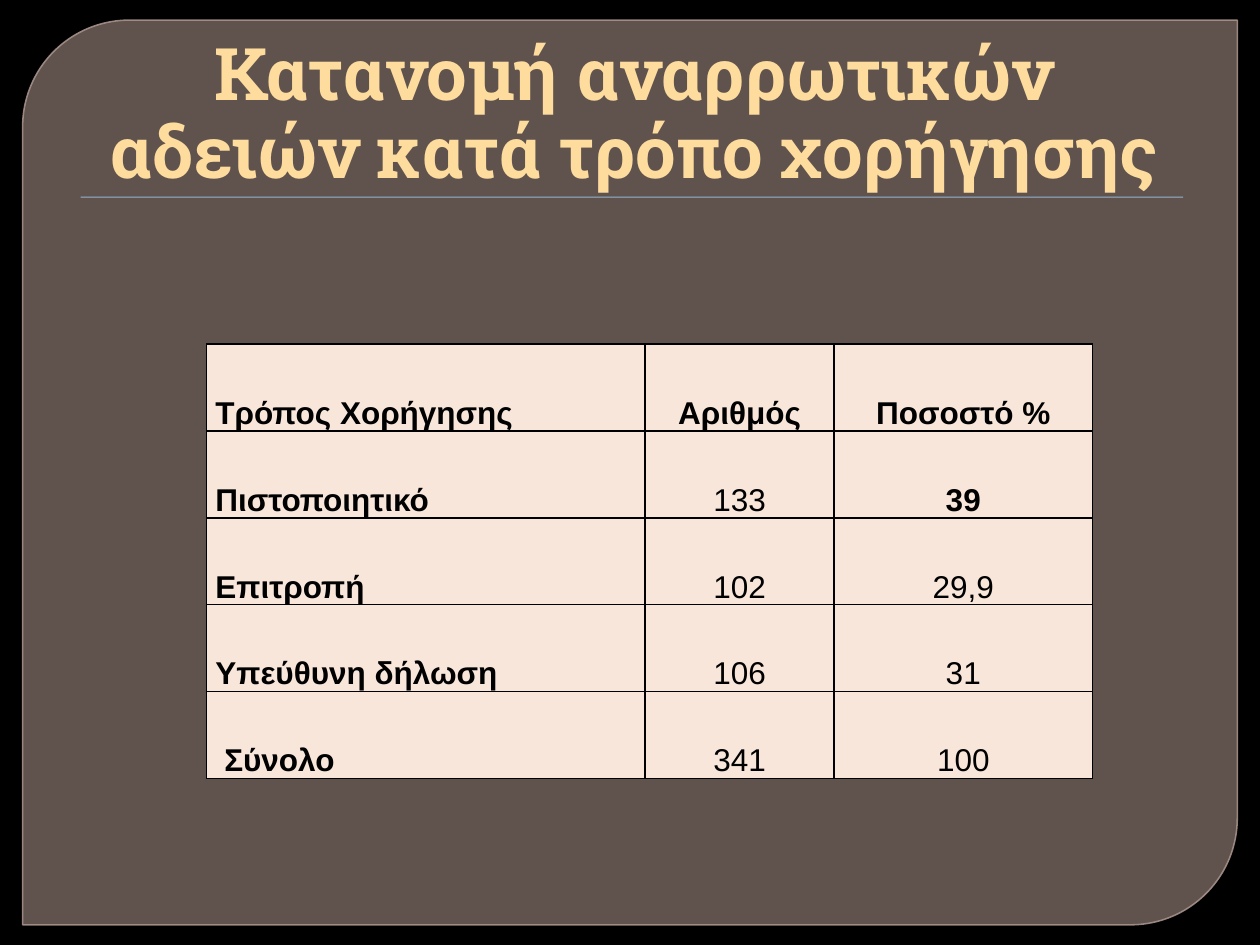
from dataclasses import dataclass

from pptx import Presentation
from pptx.dml.color import RGBColor
from pptx.enum.shapes import MSO_SHAPE
from pptx.enum.text import MSO_ANCHOR, PP_ALIGN
from pptx.oxml.ns import qn
from pptx.util import Inches, Pt
from lxml import etree

PANEL = MSO_SHAPE.ROUND_2_DIAG_RECTANGLE
RECTANGLE = MSO_SHAPE.RECTANGLE
BOTTOM = MSO_ANCHOR.BOTTOM
LEFT = PP_ALIGN.LEFT
CENTER = PP_ALIGN.CENTER


@dataclass(frozen=True)
class Theme:
    background: str = "000000"
    panel: str = "948079"
    panel_opacity: int = 65
    panel_line: str = "A9948D"
    panel_line_opacity: int = 88
    rule: str = "94B6D2"
    title: str = "FDDC9E"
    cell: str = "F8E6DA"
    ink: str = "000000"
    title_font: str = "Roboto Slab"
    table_font: str = "Arial"
    title_size: float = 41.4
    table_size: float = 18


class SlideBuilder:
    def __init__(self, slide, theme):
        self.slide = slide
        self.theme = theme
        self.paint(slide.background.fill, theme.background)

    def paint(self, fill, color, opacity=100):
        fill.solid()
        fill.fore_color.rgb = RGBColor.from_string(color)
        if opacity < 100:
            color_element = fill._xPr.find(".//" + qn("a:srgbClr"))
            etree.SubElement(color_element, qn("a:alpha"), val=str(opacity * 1000))

    def style(self, paragraph, font_name, size, color, bold, alignment):
        paragraph.alignment = alignment
        font = paragraph.font
        font.name = font_name
        font.size = Pt(size)
        font.bold = bold
        font.color.rgb = RGBColor.from_string(color)

    def panel(self, left, top, width, height, corner):
        shape = self.slide.shapes.add_shape(PANEL, left, top, width, height)
        shape.shadow.inherit = False
        shape.adjustments[0] = corner
        shape.adjustments[1] = 0
        self.paint(shape.fill, self.theme.panel, self.theme.panel_opacity)
        shape.line.width = Pt(0.87)
        self.paint(shape.line.fill, self.theme.panel_line, self.theme.panel_line_opacity)

    def rule(self, left, top, width, height):
        shape = self.slide.shapes.add_shape(RECTANGLE, left, top, width, height)
        shape.shadow.inherit = False
        self.paint(shape.fill, self.theme.rule)
        shape.line.fill.background()

    def title(self, text, left, top, width, height):
        frame = self.slide.shapes.add_textbox(left, top, width, height).text_frame
        frame.word_wrap = True
        frame.vertical_anchor = BOTTOM
        frame.margin_left = Inches(0.16)
        paragraph = frame.paragraphs[0]
        paragraph.text = text
        paragraph.line_spacing = 0.9
        self.style(paragraph, self.theme.title_font, self.theme.title_size,
                   self.theme.title, True, CENTER)

    def border(self, cell):
        properties = cell._tc.get_or_add_tcPr()
        for position, side in enumerate(("lnL", "lnR", "lnT", "lnB")):
            line = etree.Element(qn("a:" + side), w=str(Pt(1)))
            fill = etree.SubElement(line, qn("a:solidFill"))
            etree.SubElement(fill, qn("a:srgbClr"), val=self.theme.ink)
            properties.insert(position, line)

    def cell(self, cell, text, bold, alignment, indent):
        cell.text = text
        cell.vertical_anchor = BOTTOM
        cell.margin_left = indent
        cell.margin_right = cell.margin_top = cell.margin_bottom = 0
        self.paint(cell.fill, self.theme.cell)
        self.border(cell)
        self.style(cell.text_frame.paragraphs[0], self.theme.table_font,
                   self.theme.table_size, self.theme.ink, bold, alignment)

    def table(self, rows, bold_values, left, top, column_widths, row_height):
        table = self.slide.shapes.add_table(
            len(rows), len(column_widths), left, top,
            sum(column_widths), row_height * len(rows)).table
        for column, width in zip(table.columns, column_widths):
            column.width = width
        for row_index, values in enumerate(rows):
            table.rows[row_index].height = row_height
            is_total = row_index == len(rows) - 1
            for column_index, text in enumerate(values):
                is_label = column_index == 0
                bold = is_label or row_index == 0 or text in bold_values
                indent = Inches(0.14 if is_total else 0.07) if is_label else 0
                self.cell(table.cell(row_index, column_index), text, bold,
                          LEFT if is_label else CENTER, indent)


def main():
    presentation = Presentation()
    presentation.slide_width = Inches(10)
    presentation.slide_height = Inches(7.5)
    slide = presentation.slides.add_slide(presentation.slide_layouts[6])
    builder = SlideBuilder(slide, Theme())

    builder.panel(Inches(0.18), Inches(0.16), Inches(9.64), Inches(7.18), 0.118)
    builder.rule(Inches(0.64), Inches(1.56), Inches(8.75), Inches(0.01))
    leave_rows = [
        ("Τρόπος Χορήγησης", "Αριθμός", "Ποσοστό %"),
        ("Πιστοποιητικό", "133", "39"),
        ("Επιτροπή", "102", "29,9"),
        ("Υπεύθυνη δήλωση", "106", "31"),
        ("Σύνολο", "341", "100"),
    ]
    builder.table(leave_rows, {"39"}, Inches(1.64), Inches(2.73),
                  [Inches(3.48), Inches(1.5), Inches(2.05)], Inches(0.69))
    builder.title("Κατανομή αναρρωτικών αδειών κατά τρόπο χορήγησης",
                  Inches(0.5), Inches(0.23), Inches(9), Inches(1.36))
    presentation.save("out.pptx")


if __name__ == "__main__":
    main()
